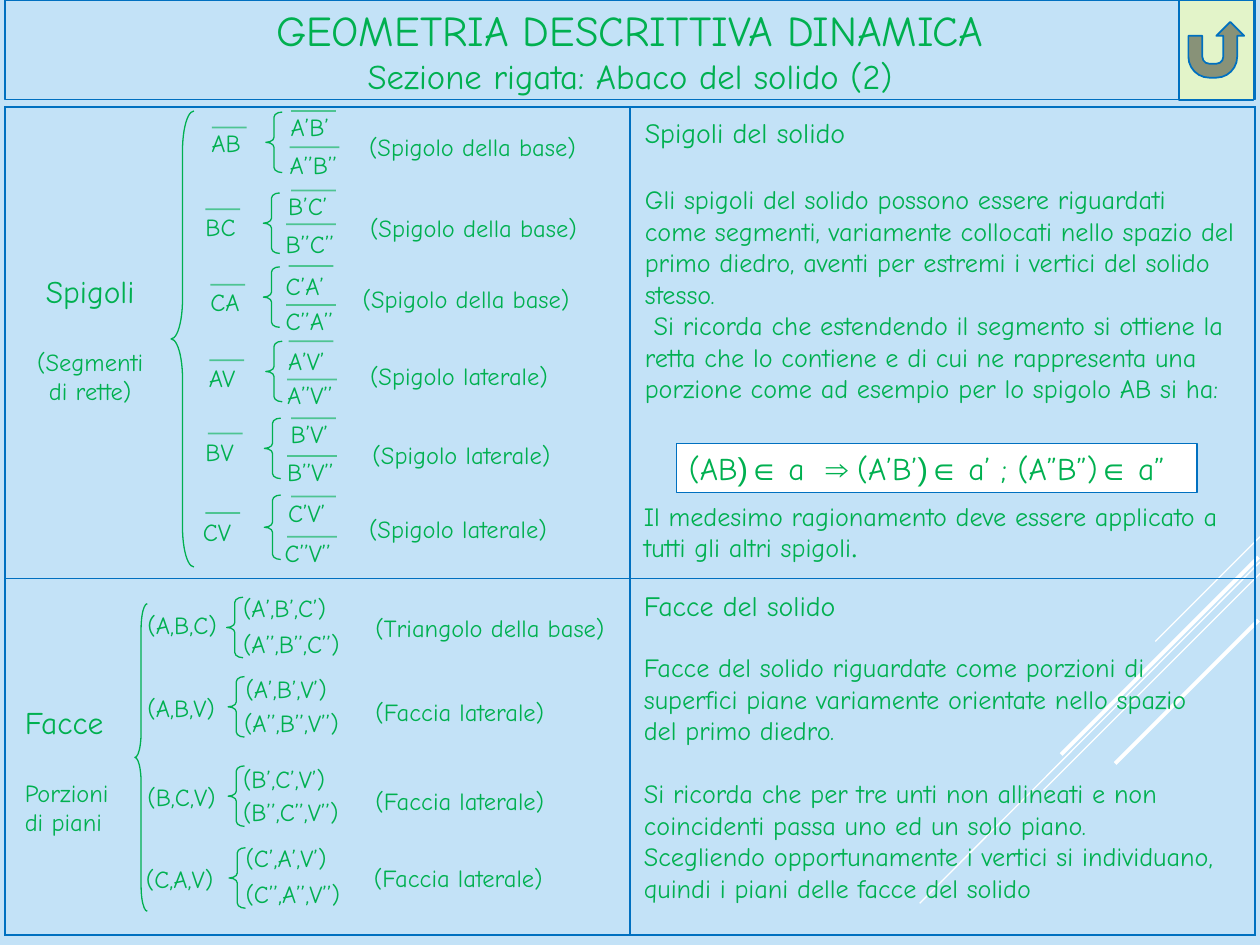
"""Build the slide that lists the edges and faces of a solid."""
from dataclasses import dataclass

from lxml.etree import SubElement
from pptx import Presentation
from pptx.dml.color import RGBColor
from pptx.enum.shapes import MSO_CONNECTOR, MSO_SHAPE
from pptx.enum.text import MSO_ANCHOR, PP_ALIGN
from pptx.oxml.ns import qn
from pptx.util import Cm, Pt


@dataclass(frozen=True)
class Theme:
    back: str = "C3E2F7"
    ink: str = "00B050"
    frame: str = "0070C0"
    white: str = "FFFFFF"
    key: str = "E3F4C9"
    face: str = "Comic Neue"
    title: float = 24.3
    under: float = 19.8
    large: float = 18
    head: float = 16
    body: float = 15
    small: float = 14


look = Theme()
hue = RGBColor.from_string


def write(shape, paras, align=PP_ALIGN.LEFT, anchor=MSO_ANCHOR.TOP):
    """Fill a shape with paragraphs of (runs, size, space before)."""
    frame = shape.text_frame
    for key, val in {"word_wrap": True, "vertical_anchor": anchor}.items():
        setattr(frame, key, val)
    for num, (runs, size, gap) in enumerate(paras):
        para = frame.paragraphs[0] if num == 0 else frame.add_paragraph()
        for key, val in {"alignment": align, "space_before": Pt(gap)}.items():
            setattr(para, key, val)
        for text, face in [(runs, look.face)] if isinstance(runs, str) else runs:
            run = para.add_run()
            run.text = text
            run.font.color.rgb = hue(look.ink)
            for key, val in {"size": Pt(size), "name": face}.items():
                setattr(run.font, key, val)


def link(ends, color, width, alpha=100):
    """Draw a straight line without a shadow."""
    line = slide.shapes.add_connector(MSO_CONNECTOR.STRAIGHT, *map(Cm, ends))
    line.line.color.rgb = hue(color)
    line.line.width = Pt(width)
    tint = line.line.fill._xPr.find(".//" + qn("a:srgbClr"))
    SubElement(tint, qn("a:alpha"), val=str(alpha * 1000))
    SubElement(line._element.spPr, qn("a:effectLst"))


deck = Presentation()
deck.slide_width, deck.slide_height = Cm(25.4), Cm(19.05)
slide = deck.slides.add_slide(deck.slide_layouts[6])
slide.background.fill.solid()
slide.background.fill.fore_color.rgb = hue(look.back)

streaks = [
    (25.4, 10.82, 23.29, 12.93, 0.75), (25.4, 11.33, 18.54, 18.21, 0.75),
    (25.4, 11.56, 21.03, 15.93, 0.75), (25.37, 11.23, 21.39, 15.21, 2.25),
    (25.37, 12.5, 22.48, 15.39, 2.25),
]
for *ends, width in streaks:
    link(ends, look.white, width)

grid = slide.shapes.add_table(2, 2, Cm(0.1), Cm(2.16), Cm(25.2), Cm(16.69)).table
grid.first_row = grid.horz_banding = False
for row, height in zip(grid.rows, (9.5, 7.19)):
    row.height = Cm(height)
for cell in grid.iter_cells():
    props = cell._tc.get_or_add_tcPr()
    for side in "LRTB":
        edge = SubElement(props, qn("a:ln" + side), w=str(Pt(1)))
        SubElement(SubElement(edge, qn("a:solidFill")), qn("a:srgbClr"), val=look.frame)
    cell.fill.background()

formula = [
    ("(AB", look.face), (")∈ ", "Arial"), ("a  ", look.face), ("⇒ ", "Arial"),
    ("(A’B’", look.face), (")∈ ", "Arial"), ("a’ ; (A”B”)", look.face),
    ("∈ ", "Arial"), ("a”", look.face),
]
plates = [
    (MSO_SHAPE.RECTANGLE, (0.1, 0, 25.2, 2.01), None, 0.75, PP_ALIGN.CENTER,
     [("GEOMETRIA DESCRITTIVA DINAMICA", look.title, 0),
      ("Sezione rigata: Abaco del solido (2)", look.under, 0)]),
    (MSO_SHAPE.RECTANGLE, (13.64, 8.94, 10.49, 0.99), look.white, 0.75, PP_ALIGN.LEFT,
     [(formula, look.large, 0)]),
    (MSO_SHAPE.ACTION_BUTTON_RETURN, (23.77, 0, 1.5, 2.01), look.key, 1, PP_ALIGN.LEFT, []),
]
for kind, place, fill, width, align, paras in plates:
    plate = slide.shapes.add_shape(kind, *map(Cm, place))
    plate.shadow.inherit = False
    plate.fill.background()
    if fill:
        plate.fill.solid()
        plate.fill.fore_color.rgb = hue(fill)
    plate.line.color.rgb = hue(look.frame)
    plate.line.width = Pt(width)
    write(plate, paras, align, MSO_ANCHOR.MIDDLE)

base, flank = "(Spigolo della base)", "(Spigolo laterale)"
edges = [
    ("AB", (4.01, 2.46, 4.27, 2.57), (5.61, 2.13, 5.87, 2.24), (5.59, 2.9, 5.84, 2.97),
     base, (7.19, 2.54), (5.36, 2.26, 1.22)),
    ("BC", (3.89, 4.14, 4.14, 4.22), (5.56, 3.73, 5.87, 3.84), (5.51, 4.5, 5.77, 4.52),
     base, (7.21, 4.17), (5.31, 3.89, 1.22)),
    ("CA", (3.99, 5.66, 4.24, 5.74), (5.51, 5.33, 5.82, 5.36), (5.51, 6.05, 5.77, 6.15),
     base, (7.06, 5.61), (5.31, 5.38, 1.22)),
    ("AV", (3.96, 7.19, 4.22, 7.26), (5.56, 6.86, 5.82, 6.88), (5.54, 7.54, 5.79, 7.65),
     flank, (7.21, 7.16), (5.36, 6.88, 1.22)),
    ("BV", (3.89, 8.69, 4.19, 8.74), (5.61, 8.33, 5.87, 8.43), (5.54, 9.09, 5.79, 9.19),
     flank, (7.26, 8.74), (5.33, 8.43, 1.22)),
    ("CV", (3.84, 10.29, 4.14, 10.34), (5.56, 9.91, 5.87, 10.01), (5.49, 10.72, 5.79, 10.82),
     flank, (7.19, 10.24), (5.33, 9.98, 1.3)),
]
side = "(Faccia laterale)"
faces = [
    ("ABC", (2.72, 12.17), (4.65, 11.84), (4.65, 12.55), "(Triangolo della base)",
     (7.32, 12.24), (4.57, 12.04)),
    ("ABV", (2.72, 13.84), (4.7, 13.46), (4.67, 14.15), side, (7.32, 13.92), (4.6, 13.64)),
    ("BCV", (2.72, 15.65), (4.65, 15.27), (4.65, 15.95), side, (7.32, 15.72), (4.6, 15.44)),
    ("CAV", (2.69, 17.3), (4.7, 16.87), (4.7, 17.6), side, (7.29, 17.27), (4.62, 17.09)),
]
marks = ("", "’", "’’")
braces = [(3.45, 2.24, 0.46, 9.19, 1.73), (2.72, 12.17, 0.25, 6.2, 2.02)]
labels = []
for name, *spots, note, spot, (left, top, tall) in edges:
    braces.append((left, top, 0.33, tall, 0.31))
    labels.append((note, *spot, 5.51))
    for mark, (x, y, start, level), span, wide in zip(marks, spots, (0.7, 0.9, 1), (1.3, 1.6, 1.8)):
        labels.append(("".join(c + mark for c in name), x, y, wide))
        link((start, level, start + span, level), look.ink, 1, 60)
for name, *spots, note, spot, (left, top) in faces:
    braces.append((left, top, 0.33, 1.22, 0.31))
    labels.append((note, *spot, 5.51))
    for mark, (x, y), wide in zip(marks, spots, (2.2, 2.4, 3)):
        labels.append(("(" + ",".join(c + mark for c in name) + ")", x, y, wide))

for *place, bend in braces:
    brace = slide.shapes.add_shape(MSO_SHAPE.LEFT_BRACE, *map(Cm, place))
    brace.shadow.inherit = False
    brace.adjustments[0] = bend
    brace.fill.background()
    brace.line.color.rgb = hue(look.ink)
    brace.line.width = Pt(0)
for text, x, y, wide in labels:
    label = slide.shapes.add_textbox(Cm(x), Cm(y), Cm(wide), Cm(0.86))
    write(label, [(text, look.small, 0)])

texts = [
    ((0.36, 5.36, 2.92, 3), PP_ALIGN.CENTER,
     [("Spigoli", look.large, 0), ("(Segmenti di rette)", look.small, 21)]),
    ((0.25, 14.05, 2.39, 3), PP_ALIGN.LEFT,
     [("Facce", look.large, 0), ("Porzioni di piani", look.small, 21)]),
    ((12.75, 2.21, 12.4, 6.76), PP_ALIGN.LEFT,
     [("Spigoli del solido", look.head, 0),
      ("Gli spigoli del solido possono essere riguardati come segmenti, variamente collocati "
       "nello spazio del primo diedro, aventi per estremi i vertici del solido stesso.",
       look.body, 19.5),
      (" Si ricorda che estendendo il segmento si ottiene la retta che lo contiene e di cui ne "
       "rappresenta una porzione come ad esempio per lo spigolo AB si ha:", look.body, 0)]),
    ((12.73, 9.96, 12.07, 1.55), PP_ALIGN.LEFT,
     [([("Il medesimo ragionamento deve essere applicato a tutti gli altri spigoli", look.face),
        (".", "Times New Roman")], look.body, 0)]),
    ((12.73, 11.73, 12.24, 6.68), PP_ALIGN.LEFT,
     [("Facce del solido", look.head, 0),
      ("Facce del solido riguardate come porzioni di superfici piane variamente orientate nello "
       "spazio del primo diedro.", look.body, 17),
      ("Si ricorda che per tre unti non allineati e non coincidenti passa uno ed un solo piano.",
       look.body, 18),
      ("Scegliendo opportunamente i vertici si individuano, quindi i piani delle facce del solido",
       look.body, 0)]),
]
for place, align, paras in texts:
    write(slide.shapes.add_textbox(*map(Cm, place)), paras, align)

deck.save("out.pptx")
